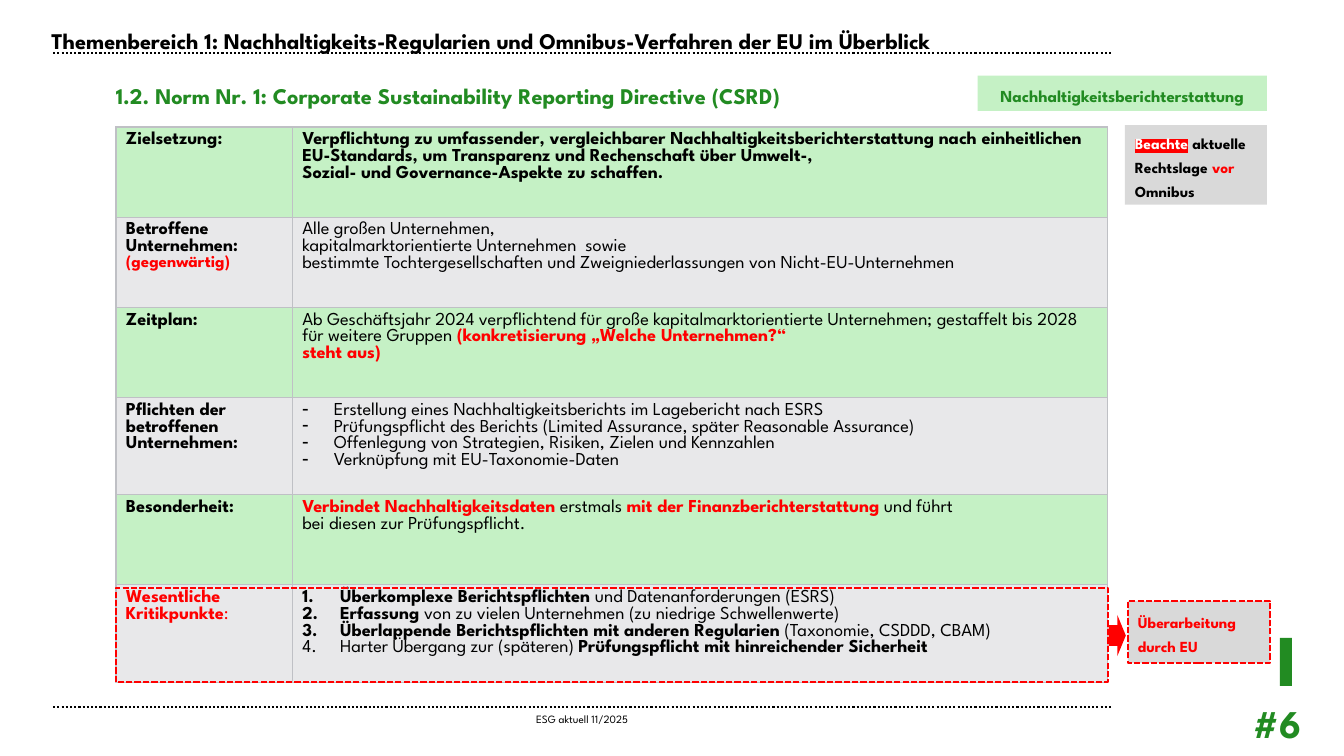
from dataclasses import dataclass

from lxml import etree
from pptx import Presentation
from pptx.dml.color import RGBColor
from pptx.enum.dml import MSO_LINE
from pptx.enum.shapes import MSO_CONNECTOR, MSO_SHAPE
from pptx.enum.text import MSO_ANCHOR, MSO_AUTO_SIZE, PP_ALIGN
from pptx.oxml.ns import qn
from pptx.util import Pt

DOT, DASH = MSO_LINE.ROUND_DOT, MSO_LINE.SQUARE_DOT
RECT, ARROW = MSO_SHAPE.RECTANGLE, MSO_SHAPE.RIGHT_ARROW
LEFT, MID, RIGHT = PP_ALIGN.LEFT, PP_ALIGN.CENTER, PP_ALIGN.RIGHT


@dataclass(frozen=True)
class Theme:
    font: str = "League Spartan"
    black: str = "000000"
    white: str = "FFFFFF"
    red: str = "FF0000"
    green: str = "228B22"
    mint: str = "C5F1C5"
    pale: str = "E8E8EA"
    grey: str = "D9D9D9"
    rule: str = "BFC0C5"
    head: int = 16
    body: int = 13
    label: int = 12
    note: int = 11
    foot: int = 8
    page: int = 28


T = Theme()


@dataclass(frozen=True)
class Style:
    size: int = T.body
    color: str = T.black
    bold: bool = False
    mark: str = ""


TEXT = Style()
BOLD = Style(bold=True)
RED = Style(color=T.red, bold=True)
HEAD = Style(T.head, bold=True)
SUB = Style(T.head, T.green, True)
TAG = Style(T.label, T.green, True)
NOTE = Style(T.note, bold=True)
ALERT = Style(T.note, T.red, True)
MARK = Style(T.note, T.white, True, T.red)

# Each cell is a list of paragraphs, each paragraph a list of runs.
ROWS = [
    (64.4, [[("Zielsetzung:", BOLD)]], "",
     [[("Verpflichtung zu umfassender, vergleichbarer "
        "Nachhaltigkeitsberichterstattung nach einheitlichen EU-Standards, "
        "um Transparenz und Rechenschaft über Umwelt-, \n"
        "Sozial- und Governance-Aspekte zu schaffen.", BOLD)]]),
    (64.4, [[("Betroffene Unternehmen:\n", BOLD),
             ("(gegenwärtig)", Style(T.label, T.red, True))]], "",
     [[("Alle großen Unternehmen,", TEXT)],
      [("kapitalmarktorientierte Unternehmen  sowie", TEXT)],
      [("bestimmte Tochtergesellschaften und Zweigniederlassungen von "
        "Nicht-EU-Unternehmen", TEXT)]]),
    (64.4, [[("Zeitplan:", BOLD)]], "",
     [[("Ab Geschäftsjahr 2024 verpflichtend für große "
        "kapitalmarktorientierte Unternehmen; gestaffelt bis 2028 für "
        "weitere Gruppen", TEXT),
       (" (konkretisierung „Welche Unternehmen?“ \nsteht aus)", RED)]]),
    (69.4, [[("Pflichten der betroffenen Unternehmen:", BOLD)]], "dash",
     [[("Erstellung eines Nachhaltigkeitsberichts im Lagebericht nach ESRS",
        TEXT)],
      [("Prüfungspflicht des Berichts (Limited Assurance, später "
        "Reasonable Assurance)", TEXT)],
      [("Offenlegung von Strategien, Risiken, Zielen und Kennzahlen", TEXT)],
      [("Verknüpfung mit EU-Taxonomie-Daten", TEXT)]]),
    (64.4, [[("Besonderheit:", BOLD)]], "",
     [[("Verbindet Nachhaltigkeitsdaten ", RED), ("erstmals ", TEXT),
       ("mit der Finanzberichterstattung ", RED),
       ("und führt \nbei diesen zur Prüfungspflicht.", TEXT)]]),
    (70, [[("Wesentliche \nKritikpunkte", RED),
           (":", Style(color=T.red))]], "number",
     [[("Überkomplexe Berichtspflichten ", BOLD),
       ("und Datenanforderungen (ESRS)", TEXT)],
      [("Erfassung ", BOLD),
       ("von zu vielen Unternehmen (zu niedrige Schwellenwerte)", TEXT)],
      [("Überlappende Berichtspflichten mit anderen Regularien ", BOLD),
       ("(Taxonomie, CSDDD, CBAM)", TEXT)],
      [("Harter Übergang zur (späteren) ", TEXT),
       ("Prüfungspflicht mit hinreichender Sicherheit", BOLD)]]),
]


def rgb(code):
    return RGBColor.from_string(code)


def add_run(para, text, style):
    run = para.add_run()
    run.text = text
    font = run.font
    font.name, font.size, font.bold = T.font, Pt(style.size), style.bold
    font.color.rgb = rgb(style.color)
    if style.mark:
        mark = etree.Element(qn("a:highlight"))
        etree.SubElement(mark, qn("a:srgbClr"), val=style.mark)
        run._r.rPr.find(qn("a:solidFill")).addnext(mark)


def add_list(para, kind):
    """Give the paragraph a hanging dash or number."""
    props = para._p.get_or_add_pPr()
    gap = Pt(22.5 if kind == "dash" else 27)
    props.set("marL", str(gap))
    props.set("indent", str(-gap))
    if kind == "dash":
        etree.SubElement(props, qn("a:buChar"), char="-")
    else:
        etree.SubElement(props, qn("a:buAutoNum"), type="arabicPeriod")


def fill_text(frame, paras, align=LEFT, kind="", space=None):
    for i, runs in enumerate(paras):
        para = frame.add_paragraph() if i else frame.paragraphs[0]
        para.alignment = align
        if space:
            para.line_spacing = space
        if kind:
            add_list(para, kind)
        for text, style in runs:
            for n, part in enumerate(text.split("\n")):
                if n:
                    para.add_line_break()
                if part:
                    add_run(para, part, style)


def set_frame(frame, side, edge):
    frame.word_wrap = True
    frame.auto_size = MSO_AUTO_SIZE.NONE
    frame.vertical_anchor = MSO_ANCHOR.MIDDLE
    frame.margin_left = frame.margin_right = Pt(side)
    frame.margin_top = frame.margin_bottom = Pt(edge)


def add_text(slide, box, text, style, align=LEFT, side=0):
    frame = slide.shapes.add_textbox(*map(Pt, box)).text_frame
    set_frame(frame, side, 0)
    fill_text(frame, [[(text, style)]], align)


def add_box(slide, box, fill="", dash=False, runs=(), align=LEFT, form=RECT):
    shape = slide.shapes.add_shape(form, *map(Pt, box))
    shape.shadow.inherit = False
    if fill:
        shape.fill.solid()
        shape.fill.fore_color.rgb = rgb(fill)
    else:
        shape.fill.background()
    if dash:
        shape.line.color.rgb = rgb(T.red)
        shape.line.width = Pt(1.5)
        shape.line.dash_style = DASH
    else:
        shape.line.fill.background()
    if runs:
        set_frame(shape.text_frame, 7.2, 3.6)
        fill_text(shape.text_frame, [runs], align, space=1.3)
    return shape


def add_rule(slide, y):
    line = slide.shapes.add_connector(
        MSO_CONNECTOR.STRAIGHT, Pt(38), Pt(y), Pt(795), Pt(y))
    line.line.color.rgb = rgb(T.black)
    line.line.width = Pt(1.5)
    line.line.dash_style = DOT
    etree.SubElement(line._element.spPr, qn("a:effectLst"))


def add_edges(cell):
    props = cell._tc.get_or_add_tcPr()
    for side in ("lnL", "lnR", "lnT", "lnB"):
        edge = etree.SubElement(props, qn("a:" + side), w=str(Pt(1)))
        fill = etree.SubElement(edge, qn("a:solidFill"))
        etree.SubElement(fill, qn("a:srgbClr"), val=T.rule)


def add_grid(slide, box):
    table = slide.shapes.add_table(len(ROWS), 2, *map(Pt, box)).table
    table.first_row = table.horz_banding = False
    table.columns[0].width = Pt(126)
    table.columns[1].width = Pt(box[2] - 126)
    for i, (height, name, kind, body) in enumerate(ROWS):
        table.rows[i].height = Pt(height)
        for j, paras in enumerate((name, body)):
            cell = table.cell(i, j)
            add_edges(cell)
            cell.fill.solid()
            cell.fill.fore_color.rgb = rgb(T.pale if i % 2 else T.mint)
            fill_text(cell.text_frame, paras, kind=kind if j else "")


def set_title(slide, box, text):
    title = slide.shapes.title
    title.left, title.top, title.width, title.height = map(Pt, box)
    set_frame(title.text_frame, 7.2, 3.6)
    fill_text(title.text_frame, [[(text, HEAD)]])


def main():
    deck = Presentation()
    deck.slide_width, deck.slide_height = Pt(960), Pt(540)
    slide = deck.slides.add_slide(deck.slide_layouts[5])
    set_title(slide, (29.5, 15.4, 788, 26.6),
              "Themenbereich 1: Nachhaltigkeits-Regularien und "
              "Omnibus-Verfahren der EU im Überblick")
    for y in (37.6, 504.7):
        add_rule(slide, y)
    add_text(slide, (820, 496, 116.7, 41), "#6",
             Style(T.page, T.green, True), RIGHT, 7.2)
    add_text(slide, (37.4, 509, 757, 9.4), "ESG aktuell 11/2025",
             Style(T.foot), MID)
    add_box(slide, (914.3, 455.7, 8.6, 34.3), T.green)
    add_text(slide, (82.8, 56, 600, 25),
             "1.2. Norm Nr. 1: Corporate Sustainability Reporting "
             "Directive (CSRD)", SUB)
    add_grid(slide, (82.8, 90.7, 708.5, 397))
    add_box(slide, (698.4, 54, 206.6, 25.2), T.mint,
            runs=[("Nachhaltigkeitsberichterstattung", TAG)], align=MID)
    note = add_box(slide, (803.5, 89.3, 101.5, 56.9), T.grey, runs=[
        ("Beachte", MARK), (" aktuelle Rechtslage ", NOTE),
        ("vor", ALERT), (" Omnibus", NOTE)])
    note.text_frame.margin_right = Pt(0)
    add_box(slide, (82.8, 419.8, 708.5, 67.7), dash=True)
    add_box(slide, (792, 439.2, 12.2, 29.5), T.red, form=ARROW)
    add_box(slide, (805.7, 429.1, 101.5, 44.6), T.grey, True,
            [("Überarbeitung durch EU", ALERT)])
    deck.save("out.pptx")


if __name__ == "__main__":
    main()
